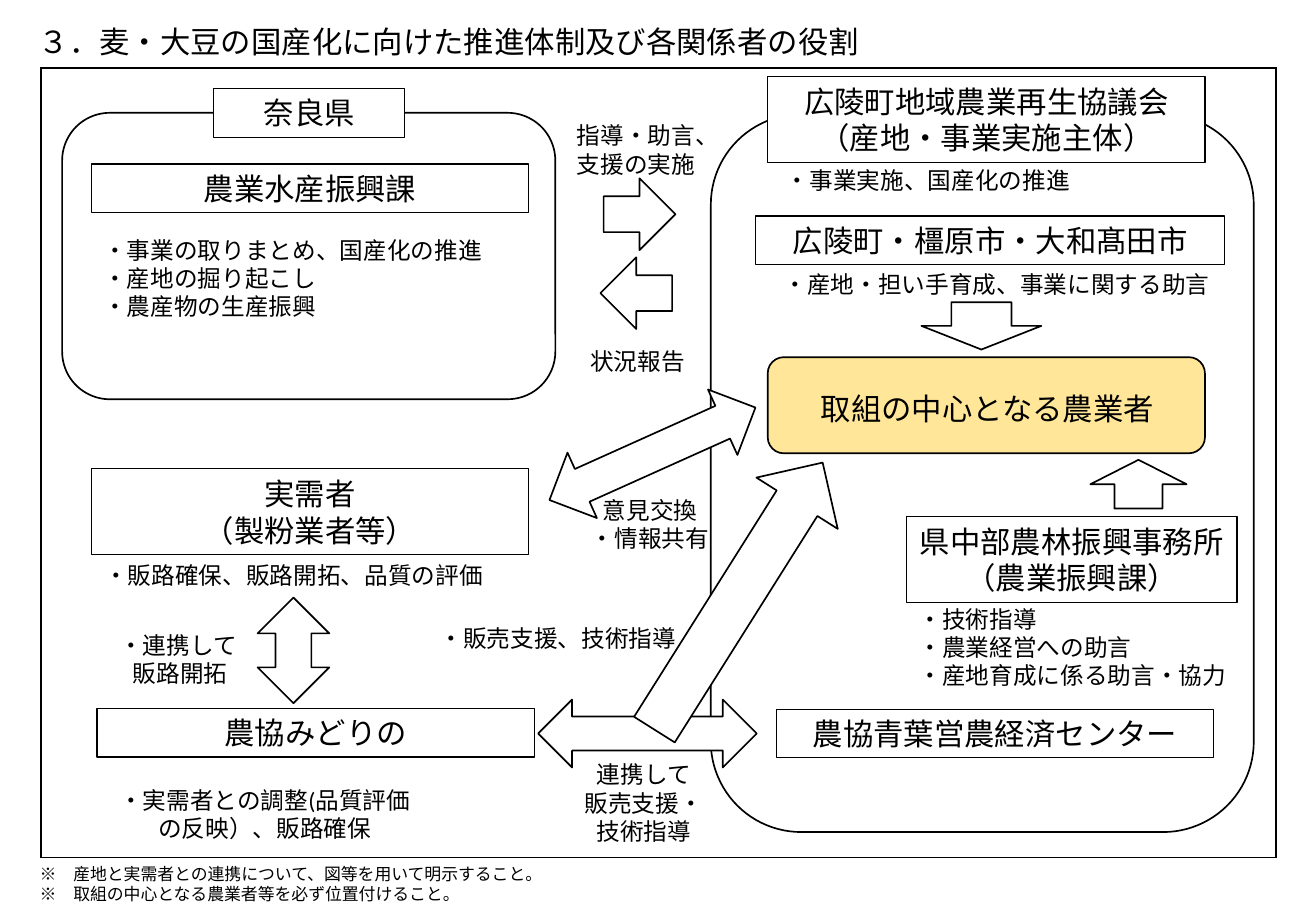
from dataclasses import dataclass
from lxml import etree
from pptx import Presentation, util as u
from pptx.dml import color
from pptx.enum import shapes, text
from pptx.oxml import ns

INK, WHITE, GOLD = "000000", "FFFFFF", "FFE699"
SANS, BODY = "Noto Sans CJK JP", "Calibri"
SHAPE = shapes.MSO_SHAPE
RIGHT, BOTH = SHAPE.RIGHT_ARROW, SHAPE.LEFT_RIGHT_ARROW
ROUND, RECT = SHAPE.ROUNDED_RECTANGLE, SHAPE.RECTANGLE
ALIGN = {"l": text.PP_ALIGN.LEFT, "c": text.PP_ALIGN.CENTER}
FORMAT = {"word_wrap": True, "auto_size": text.MSO_AUTO_SIZE.SHAPE_TO_FIT_TEXT}
WIDE, ROW, PAIR = 9.14, 1.02, 1.8


@dataclass
class Form:
    kind: int
    x: float
    y: float
    w: float
    h: float
    turn: float = 0
    fill: str = ""


@dataclass
class Box:
    words: str
    x: float
    y: float
    w: float = WIDE
    h: float = ROW
    fill: str = ""
    line: float = 0.75


@dataclass
class Note:
    words: str
    x: float
    y: float
    w: float
    h: float
    align: str = "l"
    size: int = 14
    font: str = BODY


ITEMS = [
    Form(ROUND, 14.86, 2.39, 11.35, 15.01),
    Form(BOTH, 11.25, 14.63, 4.57, 1.42, fill=WHITE),
    Note("※　産地と実需者との連携について、図等を用いて明示すること。\n"
         "※　取組の中心となる農業者等を必ず位置付けること。",
         0.58, 17.93, 26.95, 1.12, size=10, font=SANS),
    Note("３．麦・大豆の国産化に向けた推進体制及び各関係者の役割",
         0.56, 0.36, 19.2, 1.02, size=18, font=SANS),
    Form(ROUND, 1.3, 2.36, 10.31, 5.99),
    Box("奈良県", 4.47, 1.85, 3.99, fill=WHITE),
    Box("広陵町地域農業再生協議会（産地・事業実施主体）", 16.05, 1.6, h=PAIR, fill=WHITE),
    Box("農協みどりの", 2.03, 14.81),
    Box("農協青葉営農経済センター", 16.23, 14.83),
    Box("広陵町・橿原市・大和髙田市", 15.8, 4.52, 9.8),
    Form(RIGHT, 12.62, 3.73, 1.5, 1.5),
    Form(RIGHT, 12.55, 5.38, 1.5, 1.5, 180),
    Form(RIGHT, 23.29, 9.12, 1.02, 2.01, 270),
    Form(RIGHT, 20.02, 5.56, 0.99, 2.51, 90),
    Note("・事業の取りまとめ、国産化の推進\n・産地の掘り起こし\n・農産物の生産振興",
         1.91, 4.8, 9.45, 2.06),
    Note("・販路確保、販路開拓、品質の評価", 1.93, 11.61, 8.94, 0.86),
    Note("・産地・担い手育成、事業に関する助言", 16.13, 5.51, 9.73, 0.86),
    Note("・技術指導\n・農業経営への助言\n・産地育成に係る助言・協力",
         18.95, 12.52, 7.7, 2.06),
    Note("・販売支援、技術指導", 8.94, 12.93, 7.01, 0.86),
    Note("指導・助言、\n支援の実施", 11.81, 2.41, 3.2, 1.45),
    Note("状況報告", 11.91, 7.14, 2.84, 0.86, "c"),
    Form(BOTH, 11.28, 8.74, 4.72, 1.5, 335.8, WHITE),
    Box("実需者\n（製粉業者等）", 1.91, 9.8, h=PAIR),
    Note("意見交換\n・情報共有", 11.99, 10.24, 3.2, 1.45, "c"),
    Note("連携して\n販売支援・技術指導", 11.86, 15.77, 3.2, 2.06, "c"),
    Form(ROUND, 16.05, 7.47, WIDE, 2.01, fill=GOLD),
    Box("取組の中心となる農業者", 16.51, 8.03, 8.26, fill=GOLD, line=0),
    Box("農業水産振興課", 1.91, 3.43),
    Box("県中部農林振興事務所\n（農業振興課）", 18.95, 10.8, 6.91, PAIR),
    Note("・事業実施、国産化の推進", 16.18, 3.35, 7.65, 0.86),
    Note("・実需者との調整(品質評価の反映）、販路確保", 2.03, 16.31, 7.01, 1.45, "c"),
    Form(RIGHT, 12.14, 11.46, 6.6, 2.01, 302.2, WHITE),
    Form(BOTH, 5.03, 12.85, 2.21, 1.5, 270, WHITE),
    Note("・連携して\n販路開拓", 2.24, 13.06, 3.05, 1.45, "lc"),
]


def paint(part, tone: str) -> None:
    part.solid()
    part.fore_color.rgb = color.RGBColor.from_string(tone)


def place(item) -> list:
    return [u.Cm(n) for n in (item.x, item.y, item.w, item.h)]


def write(frame, words: str, align: str, size: int, font: str) -> None:
    for key, val in FORMAT.items():
        setattr(frame, key, val)
    for num, line in enumerate(words.split("\n")):
        para = frame.add_paragraph() if num else frame.paragraphs[0]
        para.alignment = ALIGN[align[min(num, len(align) - 1)]]
        run = para.add_run()
        run.text = line
        for key, val in {"size": u.Pt(size), "name": font}.items():
            setattr(run.font, key, val)
        paint(run.font.fill, INK)
        if font == SANS:
            east = etree.SubElement(run.font._element, ns.qn("a:ea"))
            east.set("typeface", font)


def outline(slide, kind: int, item, line: float):
    shape = slide.shapes.add_shape(kind, *place(item))
    shape.shadow.inherit = False
    if item.fill:
        paint(shape.fill, item.fill)
    else:
        shape.fill.background()
    if line:
        paint(shape.line.fill, INK)
        shape.line.width = u.Pt(line)
    else:
        shape.line.fill.background()
    return shape


def draw(slide, item) -> None:
    if isinstance(item, Form):
        outline(slide, item.kind, item, 1).rotation = item.turn
    elif isinstance(item, Box):
        frame = outline(slide, RECT, item, item.line).text_frame
        frame.vertical_anchor = text.MSO_ANCHOR.MIDDLE
        write(frame, item.words, "c", 18, BODY)
    else:
        frame = slide.shapes.add_textbox(*place(item)).text_frame
        write(frame, item.words, item.align, item.size, item.font)


def border(slide) -> None:
    spot = [u.Cm(n) for n in (0.86, 1.42, 25.81, 16.51)]
    cell = slide.shapes.add_table(1, 1, *spot).table.cell(0, 0)
    cell.fill.background()
    props = cell._tc.get_or_add_tcPr()
    for num, side in enumerate("LRTB"):
        edge = etree.Element(ns.qn(f"a:ln{side}"), w=str(u.Pt(1)))
        fill = etree.SubElement(edge, ns.qn("a:solidFill"))
        etree.SubElement(fill, ns.qn("a:srgbClr"), val=INK)
        props.insert(num, edge)


def main() -> None:
    deck = Presentation()
    deck.slide_width, deck.slide_height = u.Cm(27.51), u.Cm(19.05)
    slide = deck.slides.add_slide(deck.slide_layouts[6])
    border(slide)
    for item in ITEMS:
        draw(slide, item)
    deck.save("out.pptx")


if __name__ == "__main__":
    main()
